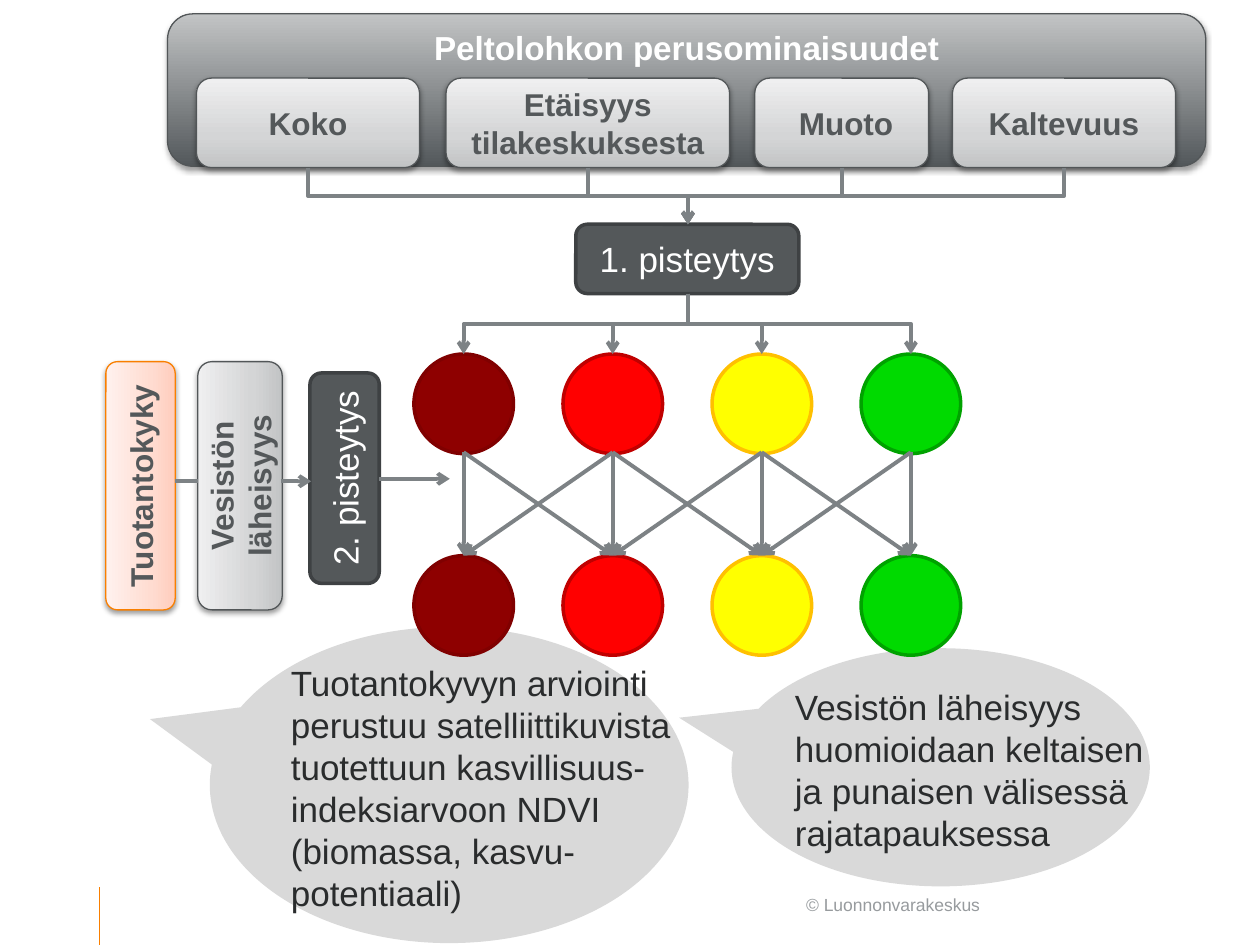
from lxml.etree import SubElement
from pptx import Presentation
from pptx.dml.color import RGBColor
from pptx.enum.shapes import MSO_CONNECTOR, MSO_SHAPE
from pptx.enum.text import MSO_ANCHOR, PP_ALIGN
from pptx.oxml.ns import qn
from pptx.util import Inches, Pt

WHITE = RGBColor(0xFF, 0xFF, 0xFF)
SLATE = RGBColor(0x54, 0x58, 0x5A)
SLATE_EDGE = RGBColor(0x3E, 0x41, 0x43)
GREY_EDGE = RGBColor(0x52, 0x56, 0x58)
ARROW_GREY = RGBColor(0x7D, 0x82, 0x85)
CALLOUT_GREY = RGBColor(0xD9, 0xD9, 0xD9)
NOTE_TEXT = RGBColor(0x2A, 0x2C, 0x2D)
FOOTER_GREY = RGBColor(0x97, 0x9B, 0x9E)
ORANGE = RGBColor(0xF9, 0x7F, 0x00)

# Gradient stops as (percent, colour), from bottom to top
DARK_FADE = [(0, RGBColor(0x53, 0x58, 0x5B)), (100, RGBColor(0xC2, 0xC4, 0xC5))]
GREY_FADE = [(0, RGBColor(0xC2, 0xC4, 0xC5)), (35, RGBColor(0xD4, 0xD5, 0xD6)),
             (100, RGBColor(0xEF, 0xEF, 0xF0))]
PEACH_FADE = [(0, RGBColor(0xFF, 0xCD, 0xBD)), (35, RGBColor(0xFF, 0xDC, 0xD1)),
              (100, RGBColor(0xFF, 0xF1, 0xEE))]

# Fill and outline of the four score classes
SCORE_COLOURS = [
    (RGBColor(0x8E, 0x00, 0x00), RGBColor(0x80, 0x00, 0x00)),
    (RGBColor(0xFF, 0x00, 0x00), RGBColor(0xC0, 0x00, 0x00)),
    (RGBColor(0xFF, 0xFF, 0x00), RGBColor(0xFF, 0xC0, 0x00)),
    (RGBColor(0x00, 0xDA, 0x00), RGBColor(0x00, 0xA2, 0x00)),
]


def write_text(shape, paragraphs, size=18, colour=SLATE, bold=False,
               align=PP_ALIGN.CENTER, anchor=MSO_ANCHOR.MIDDLE, wrap=True):
    frame = shape.text_frame
    frame.word_wrap = wrap
    frame.vertical_anchor = anchor
    frame.text = "\n".join(paragraphs)
    for paragraph in frame.paragraphs:
        paragraph.alignment = align
        paragraph.font.name = "Arial"
        paragraph.font.size = Pt(size)
        paragraph.font.bold = bold
        paragraph.font.color.rgb = colour


def draw_line(start, end, bent=False, arrow=True, colour=ARROW_GREY, width=2.25):
    (x1, y1), (x2, y2) = start, end
    kind = MSO_CONNECTOR.ELBOW if bent else MSO_CONNECTOR.STRAIGHT
    line = slide.shapes.add_connector(
        kind, Inches(x1), Inches(y1), Inches(x2), Inches(y2))
    line.line.color.rgb = colour
    line.line.width = Pt(width)
    properties = line.element.spPr
    if bent:
        # Turn the elbow so that it leaves and arrives vertically
        drop, span = y2 - y1, abs(x2 - x1)
        line.left = Inches((x1 + x2 - drop) / 2)
        line.top = Inches((y1 + y2 - span) / 2)
        line.width, line.height = Inches(drop), Inches(span)
        frame = properties.find(qn("a:xfrm"))
        frame.set("rot", "16200000" if x2 > x1 else "5400000")
        frame.set("flipH", "1" if x2 > x1 else "0")
    if arrow:
        SubElement(properties.find(qn("a:ln")), qn("a:tailEnd"), type="arrow")
    SubElement(properties, qn("a:effectLst"))


presentation = Presentation()
presentation.slide_width = Inches(10)
presentation.slide_height = Inches(7.5)
slide = presentation.slides.add_slide(presentation.slide_layouts[6])

# Footer
draw_line((0.79, 7.04), (0.79, 7.5), arrow=False, colour=ORANGE, width=1)
footer = slide.shapes.add_textbox(Inches(6.3), Inches(7.05), Inches(1.94), Inches(0.27))
write_text(footer, ["© Luonnonvarakeskus"], size=10, colour=FOOTER_GREY,
           align=PP_ALIGN.LEFT, anchor=MSO_ANCHOR.TOP)

# Callout balloons, turned so that the tail points left
for left, top, width, height in [(6.52, 4.43, 1.89, 3.32), (2.31, 4.33, 2.51, 3.8)]:
    balloon = slide.shapes.add_shape(
        MSO_SHAPE.OVAL_CALLOUT, Inches(left), Inches(top), Inches(width), Inches(height))
    balloon.rotation = 90
    balloon.shadow.inherit = False
    balloon.fill.solid()
    balloon.fill.fore_color.rgb = CALLOUT_GREY
    balloon.line.fill.background()

# Gradient boxes: field properties on top, other criteria on the left
criteria = [("Koko", 1.56, 1.77), ("Etäisyys tilakeskuksesta", 3.54, 2.25),
            (" Muoto", 5.99, 1.38), ("Kaltevuus", 7.56, 1.77)]
heading_format = dict(size=19, colour=WHITE, anchor=MSO_ANCHOR.TOP)
gradient_boxes = [("Peltolohkon perusominaisuudet", 1.33, 0.11, 8.24, 1.21, 0,
                   DARK_FADE, GREY_EDGE, heading_format)]
gradient_boxes += [(name, left, 0.62, width, 0.71, 0, GREY_FADE, GREY_EDGE, {})
                   for name, left, width in criteria]
gradient_boxes += [
    ("Tuotantokyky", 0.13, 3.58, 1.97, 0.55, 270, PEACH_FADE, ORANGE, {}),
    ("Vesistön läheisyys", 0.92, 3.52, 1.97, 0.67, 270, GREY_FADE, GREY_EDGE, {}),
]
for name, left, top, width, height, turn, fade, edge, text_format in gradient_boxes:
    box = slide.shapes.add_shape(
        MSO_SHAPE.ROUNDED_RECTANGLE, Inches(left), Inches(top), Inches(width), Inches(height))
    box.rotation = turn
    box.line.color.rgb = edge
    box.line.width = Pt(0.75)
    box.fill.gradient()
    box.fill.gradient_angle = 90
    stops = box.element.spPr.find(".//" + qn("a:gsLst"))
    stops.clear()
    for percent, colour in fade:
        stop = SubElement(stops, qn("a:gs"), pos=str(percent * 1000))
        SubElement(stop, qn("a:srgbClr"), val=str(colour))
    box.shadow.inherit = False
    shadow = SubElement(
        box.element.spPr.find(qn("a:effectLst")), qn("a:outerShdw"),
        blurRad=str(Pt(3.1)), dist=str(Pt(1.6)), dir="5400000", rotWithShape="0")
    shade = SubElement(shadow, qn("a:srgbClr"), val="000000")
    SubElement(shade, qn("a:alpha"), val="38000")
    write_text(box, [name], bold=True, **text_format)

# Scoring steps
for name, left, top, width, turn in [("1. pisteytys", 4.57, 1.78, 1.77, 0),
                                     ("2. pisteytys", 1.9, 3.52, 1.67, 270)]:
    step = slide.shapes.add_shape(
        MSO_SHAPE.ROUNDED_RECTANGLE, Inches(left), Inches(top), Inches(width), Inches(0.55))
    step.rotation = turn
    step.shadow.inherit = False
    step.fill.solid()
    step.fill.fore_color.rgb = SLATE
    step.line.color.rgb = SLATE_EDGE
    step.line.width = Pt(2)
    write_text(step, [name], size=20, colour=WHITE)

# Score circles before and after the second scoring
DIAMETER = 0.79
score_centres = [3.68 + 1.183 * column for column in range(4)]
for top in (2.81, 4.41):
    for centre, (fill, edge) in zip(score_centres, SCORE_COLOURS):
        score = slide.shapes.add_shape(
            MSO_SHAPE.OVAL, Inches(centre - DIAMETER / 2), Inches(top),
            Inches(DIAMETER), Inches(DIAMETER))
        score.shadow.inherit = False
        score.fill.solid()
        score.fill.fore_color.rgb = fill
        score.line.color.rgb = edge
        score.line.width = Pt(2)

# Criteria to first scoring, and from there to the upper circles
for name, left, width in criteria:
    draw_line((left + width / 2, 1.33), (5.46, 1.78), bent=True)
for centre in score_centres:
    draw_line((5.46, 2.33), (centre, 2.81), bent=True)

# Each score may stay or move one class
for before, start in enumerate(score_centres):
    for after, end in enumerate(score_centres):
        if abs(before - after) <= 1:
            draw_line((start, 3.59), (end, 4.41))

# Chain of the second scoring
draw_line((1.39, 3.82), (1.57, 3.82), arrow=False)
draw_line((2.23, 3.82), (2.47, 3.82))
draw_line((3.01, 3.8), (3.57, 3.8))

# Callout texts
productivity = ["Tuotantokyvyn arviointi",
                "perustuu satelliittikuvista \vtuotettuun kasvillisuus-\v"
                "indeksiarvoon NDVI \v(biomassa, kasvu-\vpotentiaali)"]
waterside = ["Vesistön läheisyys", "huomioidaan keltaisen",
             "ja punaisen välisessä", "rajatapauksessa"]
for lines, left, top, width, height in [(productivity, 2.21, 5.2, 3.32, 2.12),
                                        (waterside, 6.21, 5.39, 2.99, 1.45)]:
    note = slide.shapes.add_textbox(
        Inches(left), Inches(top), Inches(width), Inches(height))
    write_text(note, lines, size=20, colour=NOTE_TEXT, align=PP_ALIGN.LEFT,
               anchor=MSO_ANCHOR.TOP, wrap=False)

presentation.save("out.pptx")
